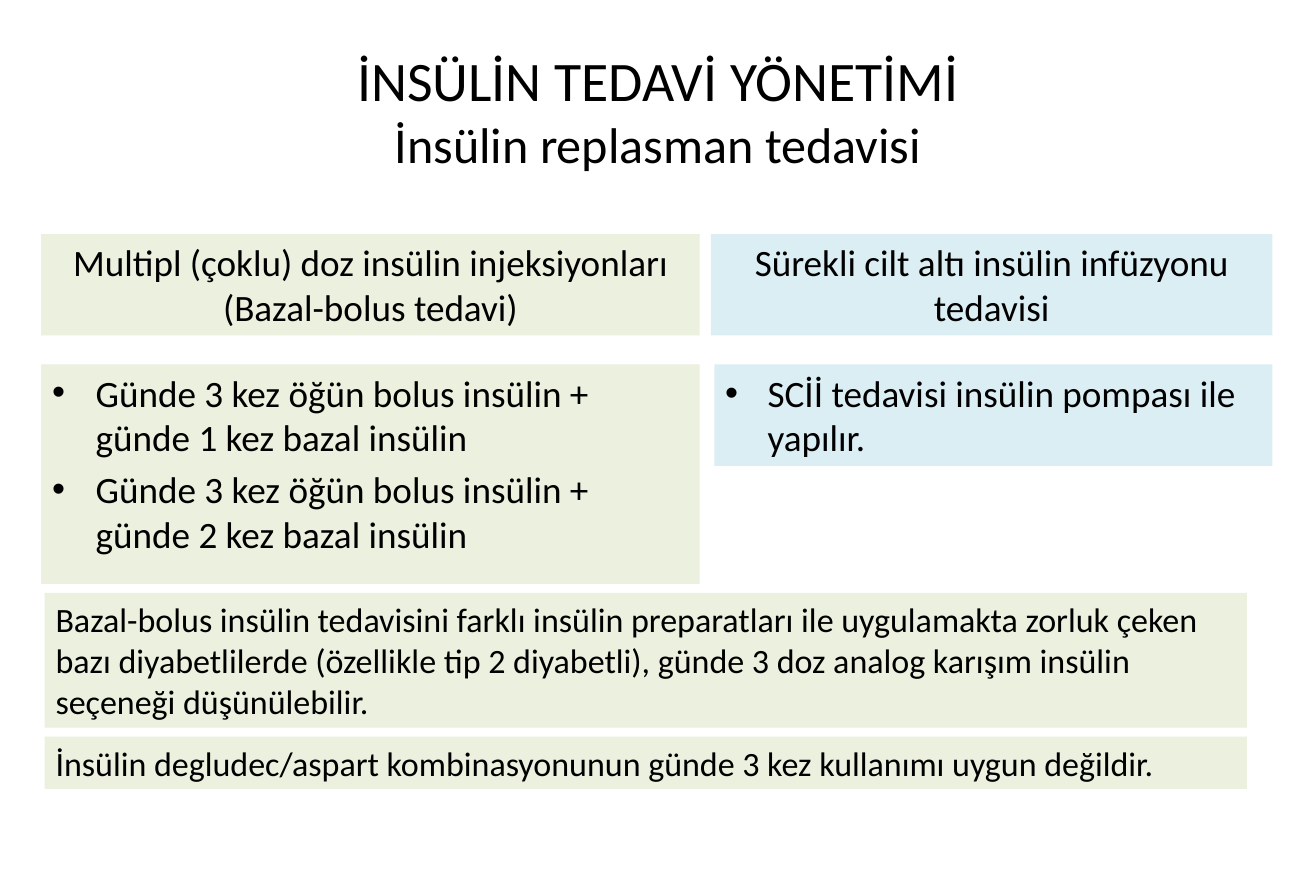
from dataclasses import dataclass

from lxml import etree
from pptx import Presentation
from pptx import util as u
from pptx.dml.color import RGBColor
from pptx.enum import shapes, text
from pptx.oxml.ns import qn


@dataclass
class Theme:
    font: str = "Calibri"
    ink: str = "000000"
    green: str = "EBF1DE"
    blue: str = "DBEEF4"
    title: float = 36
    sub: float = 32.4
    body: float = 24
    note: float = 22


theme = Theme()
left, mid = text.PP_ALIGN.LEFT, text.PP_ALIGN.CENTER

deck = Presentation()
deck.slide_width = u.Inches(11.81)
deck.slide_height = u.Inches(7.95)
slide = deck.slides.add_slide(deck.slide_layouts[6])


def style(para, size, align):
    para.alignment = align
    for run in para.runs:
        run.font.name = theme.font
        run.font.size = u.Pt(size)
        run.font.color.rgb = RGBColor.from_string(theme.ink)


def bullet(para, indent):
    props = para._p.get_or_add_pPr()
    props.set("marL", str(u.Inches(indent)))
    props.set("indent", str(u.Inches(-indent)))
    etree.SubElement(props, qn("a:buFont")).set("typeface", "Arial")
    etree.SubElement(props, qn("a:buChar")).set("char", "•")


# Title with subtitle on a second line
head = slide.shapes.add_textbox(
    u.Inches(0.59), u.Inches(0.32), u.Inches(10.63), u.Inches(1.33))
frame = head.text_frame
frame.word_wrap = True
frame.vertical_anchor = text.MSO_ANCHOR.MIDDLE
para = frame.paragraphs[0]
para.text = "İNSÜLİN TEDAVİ YÖNETİMİ"
para.add_line_break()
para.add_run().text = "İnsülin replasman tedavisi"
style(para, theme.title, mid)
para.runs[1].font.size = u.Pt(theme.sub)

# Panels: place, fill, type size, alignment, bullet indent, lines
panels = [
    ((0.37, 2.1, 5.91, 0.91), theme.green, theme.body, mid, 0,
     ["Multipl (çoklu) doz insülin injeksiyonları (Bazal-bolus tedavi)"]),
    ((6.38, 2.1, 5.04, 0.91), theme.blue, theme.body, mid, 0,
     ["Sürekli cilt altı insülin infüzyonu tedavisi"]),
    ((0.37, 3.27, 5.91, 1.97), theme.green, theme.body, left, 0.39,
     ["Günde 3 kez öğün bolus insülin + günde 1 kez bazal insülin",
      "Günde 3 kez öğün bolus insülin + günde 2 kez bazal insülin"]),
    ((6.41, 3.27, 5.01, 0.91), theme.blue, theme.body, left, 0.38,
     ["SCİİ tedavisi insülin pompası ile yapılır."]),
    ((0.4, 5.32, 10.79, 1.21), theme.green, theme.note, left, 0,
     ["Bazal-bolus insülin tedavisini farklı insülin preparatları ile "
      "uygulamakta zorluk çeken bazı diyabetlilerde (özellikle tip 2 "
      "diyabetli), günde 3 doz analog karışım insülin seçeneği "
      "düşünülebilir."]),
    ((0.4, 6.61, 10.79, 0.47), theme.green, theme.note, left, 0,
     ["İnsülin degludec/aspart kombinasyonunun günde 3 kez kullanımı "
      "uygun değildir."]),
]

for place, fill, size, align, indent, lines in panels:
    panel = slide.shapes.add_shape(
        shapes.MSO_SHAPE.RECTANGLE, *[u.Inches(n) for n in place])
    panel.shadow.inherit = False
    panel.fill.solid()
    panel.fill.fore_color.rgb = RGBColor.from_string(fill)
    panel.line.fill.background()
    frame = panel.text_frame
    frame.word_wrap = True
    frame.vertical_anchor = text.MSO_ANCHOR.TOP
    for n, line in enumerate(lines):
        para = frame.add_paragraph() if n else frame.paragraphs[0]
        para.text = line
        if n:
            para.space_before = u.Pt(0.2 * size)
        if indent:
            bullet(para, indent)
        style(para, size, align)

deck.save("out.pptx")
